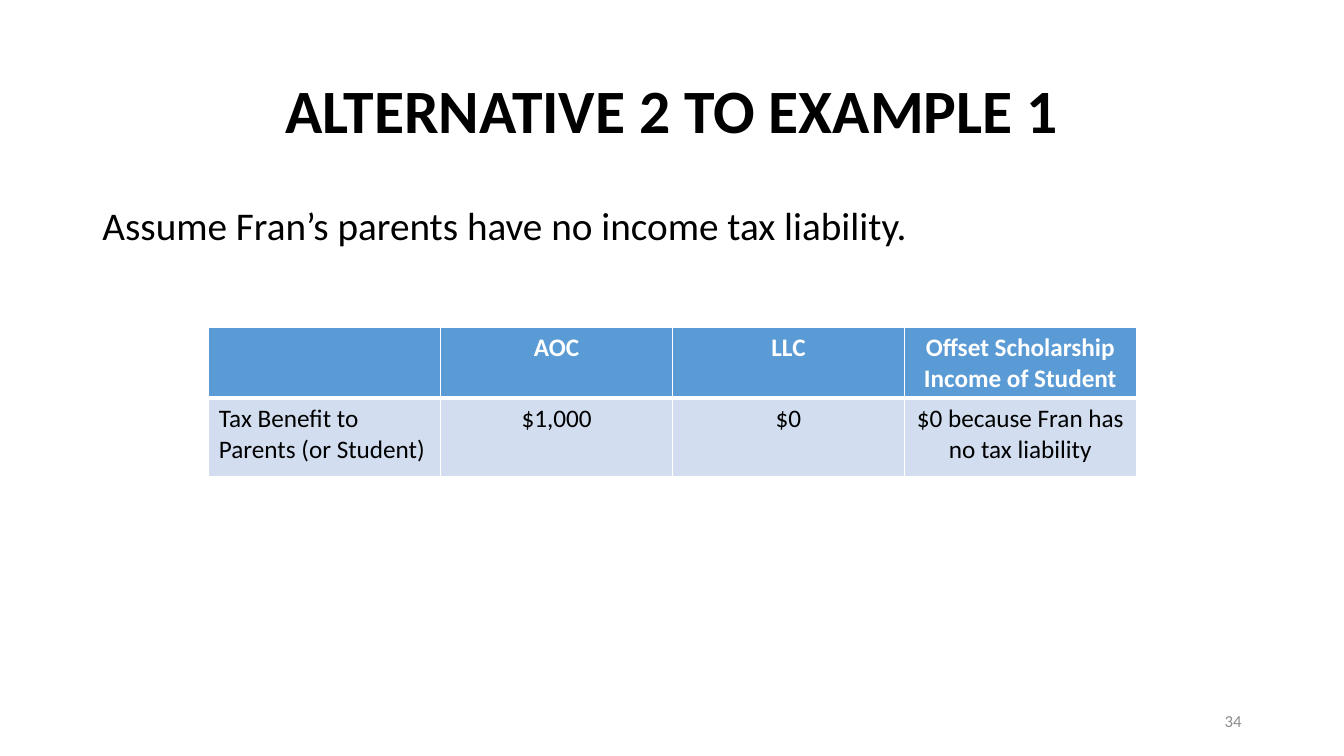
from lxml.etree import SubElement
from pptx import Presentation
from pptx.dml.color import RGBColor
from pptx.enum.text import MSO_ANCHOR, MSO_AUTO_SIZE, PP_ALIGN
from pptx.oxml import parse_xml
from pptx.oxml.ns import nsdecls, qn
from pptx.util import Pt

FONT = "Calibri"
COLORS = {
    "text": "000000",
    "white": "FFFFFF",
    "number": "8C8C8C",
    "header": "5B9BD5",
    "row": "D2DEEF",
}
TABLE_ROWS = [
    ["", "AOC", "LLC", "Offset Scholarship Income of Student"],
    ["Tax Benefit to Parents (or Student)", "$1,000", "$0", "$0 because Fran has no tax liability"],
]
COLUMN_WIDTH = 165.6
ROW_HEIGHTS = [50, 56.2]


def place(shape, left, top, width, height):
    """Set a shape's position and size in points."""
    shape.left, shape.top = Pt(left), Pt(top)
    shape.width, shape.height = Pt(width), Pt(height)


def write_text(text_frame, text, size, color, align, bold=False):
    """Write one formatted paragraph and return it."""
    text_frame.text = text
    text_frame.word_wrap = True
    paragraph = text_frame.paragraphs[0]
    paragraph.alignment = align
    for run in paragraph.runs:
        run.font.name = FONT
        run.font.size = Pt(size)
        run.font.bold = bold
        run.font.color.rgb = RGBColor.from_string(COLORS[color])
    return paragraph


def add_title(slide, text):
    """Fill the title placeholder."""
    title = slide.shapes.title
    place(title, 66, 28.75, 828, 104.4)
    paragraph = write_text(title.text_frame, text, 44, "text", PP_ALIGN.CENTER, True)
    paragraph.line_spacing = 0.9
    title.text_frame.auto_size = MSO_AUTO_SIZE.NONE
    title.text_frame.vertical_anchor = MSO_ANCHOR.MIDDLE


def add_body(slide, text):
    """Fill the body placeholder with an unbulleted paragraph."""
    body = slide.placeholders[1]
    place(body, 66, 143.75, 828, 342.6)
    paragraph = write_text(body.text_frame, text, 28, "text", PP_ALIGN.LEFT)
    paragraph.line_spacing = 0.9
    paragraph.space_before = Pt(10)
    body.text_frame.auto_size = MSO_AUTO_SIZE.NONE
    properties = paragraph._p.get_or_add_pPr()
    properties.set("marL", "0")
    properties.set("indent", "0")
    SubElement(properties, qn("a:buNone"))


def add_slide_number(slide, text):
    """Add the slide number at the lower right."""
    number = slide.shapes.add_textbox(Pt(678), Pt(500.5), Pt(216), Pt(28.75))
    write_text(number.text_frame, text, 12, "number", PP_ALIGN.RIGHT)
    number.text_frame.vertical_anchor = MSO_ANCHOR.MIDDLE


def set_borders(cell, widths):
    """Draw white borders, given widths for left, right, top and bottom."""
    properties = cell._tc.get_or_add_tcPr()
    for index, (side, width) in enumerate(zip("LRTB", widths)):
        line = parse_xml(
            f'<a:ln{side} {nsdecls("a")} w="{Pt(width)}"><a:solidFill>'
            f'<a:srgbClr val="{COLORS["white"]}"/></a:solidFill></a:ln{side}>'
        )
        properties.insert(index, line)


def add_benefit_table(slide):
    """Add the table comparing tax benefits."""
    columns = len(TABLE_ROWS[0])
    frame = slide.shapes.add_table(
        len(TABLE_ROWS), columns, Pt(149.2), Pt(234),
        Pt(COLUMN_WIDTH * columns), Pt(sum(ROW_HEIGHTS)),
    )
    table = frame.table
    for column in table.columns:
        column.width = Pt(COLUMN_WIDTH)
    for row_index, values in enumerate(TABLE_ROWS):
        header = row_index == 0
        table.rows[row_index].height = Pt(ROW_HEIGHTS[row_index])
        for column_index, value in enumerate(values):
            cell = table.cell(row_index, column_index)
            cell.fill.solid()
            cell.fill.fore_color.rgb = RGBColor.from_string(COLORS["header" if header else "row"])
            align = PP_ALIGN.CENTER if column_index else PP_ALIGN.LEFT
            write_text(cell.text_frame, value, 18, "white" if header else "text", align, header)
            set_borders(cell, (1, 1, 1, 3) if header else (1, 1, 3, 1))


def main():
    """Build and save the slide."""
    presentation = Presentation()
    presentation.slide_width, presentation.slide_height = Pt(960), Pt(540)
    slide = presentation.slides.add_slide(presentation.slide_layouts[1])
    add_title(slide, "ALTERNATIVE 2 TO EXAMPLE 1")
    add_body(slide, "Assume Fran’s parents have no income tax liability.")
    add_slide_number(slide, "34")
    add_benefit_table(slide)
    presentation.save("out.pptx")


if __name__ == "__main__":
    main()
